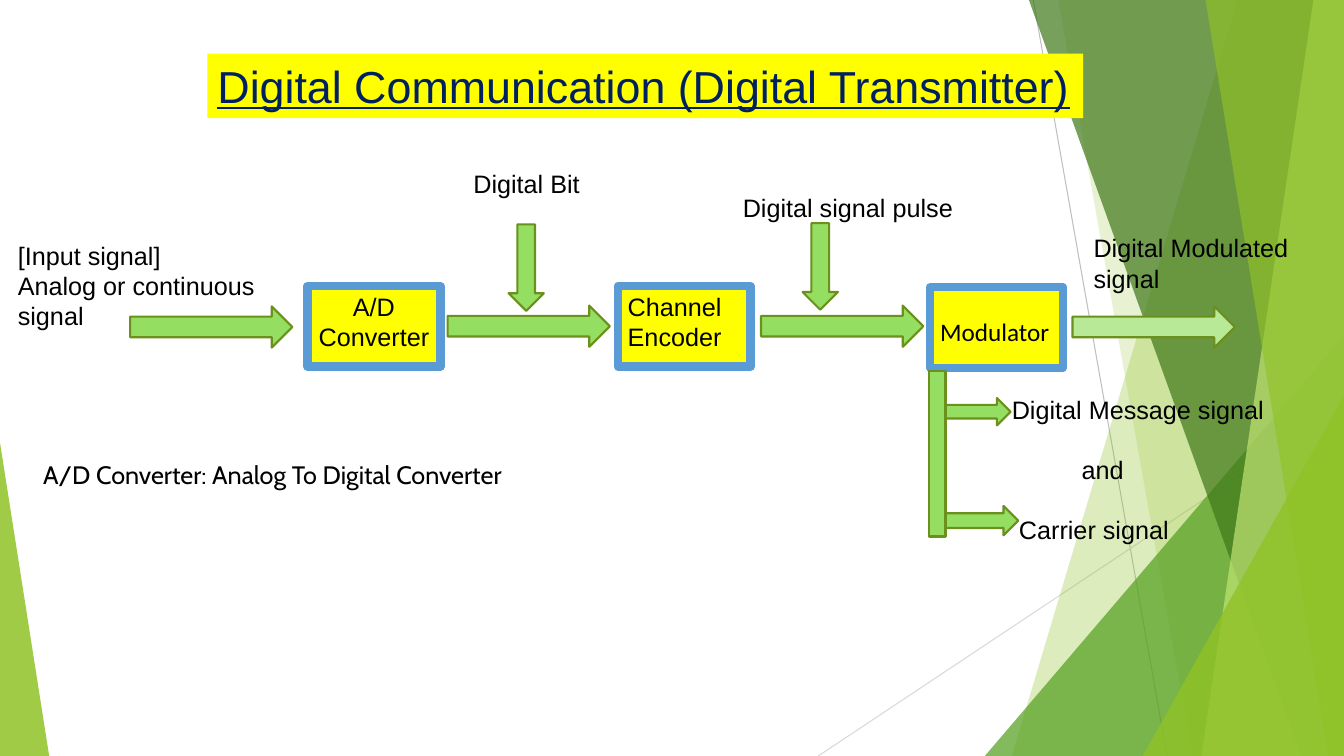
from dataclasses import dataclass

from lxml import etree
from pptx import Presentation
from pptx import util as u
from pptx.dml.color import RGBColor
from pptx.enum import shapes, text
from pptx.oxml.ns import qn

WIDTH, HEIGHT = 33.87, 19.05
YELLOW, GREEN, OLIVE, LIME = "FFFF00", "94DE61", "6B901C", "90C226"
ARROW = shapes.MSO_SHAPE.RIGHT_ARROW
RECTANGLE = shapes.MSO_SHAPE.RECTANGLE
LEFT, CENTER = text.PP_ALIGN.LEFT, text.PP_ALIGN.CENTER


@dataclass
class Band:
    """Backdrop area reaching from a slanted left edge to the slide's right side."""
    top_x: float
    bottom_x: float
    color: str
    opacity: int


@dataclass
class Wedge:
    """Right-angled triangle standing on the slide's bottom edge."""
    left: float
    width: float
    height: float
    apex: int
    color: str
    opacity: int


@dataclass
class Block:
    left: float
    top: float
    lines: list[str]
    font: str = "Arial"
    align: text.PP_ALIGN = LEFT
    inset_top: float = 0.13


@dataclass
class Part:
    """Green arrow or bar."""
    left: float
    top: float
    width: float = 4.09
    height: float = 1.04
    rotation: int = 0
    color: str = GREEN
    kind: shapes.MSO_SHAPE = ARROW


@dataclass
class Label:
    left: float
    top: float
    width: float
    height: float
    lines: list[str]
    font: str = "Arial"
    wrap: bool = False
    gap: float = 0
    indents: tuple[float, ...] = ()


BACKDROP = [
    Band(31.19, 25.5, LIME, 30),
    Band(26.67, 30.05, LIME, 20),
    Wedge(24.82, 9.05, 10.59, 1, "54A021", 72),
    Band(25.93, 32.79, "3F7819", 70),
    Band(33.1, 30.28, "C0E474", 70),
    Band(30.38, 33.48, LIME, 65),
    Wedge(28.8, 5.07, 9.07, 1, LIME, 80),
    Wedge(0, 1.24, 7.9, 0, LIME, 85),
]
BLOCKS = [
    Block(7.75, 7.21, ["A/D", "Converter"], align=CENTER),
    Block(15.57, 7.21, ["Channel Encoder"]),
    Block(23.44, 7.24, ["Modulator"], font="Calibri", inset_top=0.72),
]
PARTS = [
    Part(3.28, 7.72),
    Part(11.28, 7.7),
    Part(19.18, 7.7),
    Part(27.03, 7.72, color="B7E996"),
    Part(12.17, 6.3, 2.18, 0.89, rotation=90),
    Part(19.58, 6.27, 2.18, 0.89, rotation=90),
    Part(23.83, 12.75, 1.83, 0.74),
    Part(23.72, 10.03, 1.75, 0.69),
    Part(23.42, 9.35, 0.41, 4.17, kind=RECTANGLE),
]
LABELS = [
    Label(0.2, 5.92, 8, 2.57, ["[Input signal]", "Analog or continuous signal"], wrap=True),
    Label(11.68, 4.11, 3.23, 1.02, ["Digital Bit"]),
    Label(18.47, 4.72, 6.07, 1.02, ["Digital signal pulse"]),
    Label(27.31, 5.74, 5.46, 1.8, ["Digital Modulated", "signal"]),
    Label(25.25, 9.8, 7.11, 4.11, ["Digital Message signal", "and", "Carrier signal"],
          gap=21.6, indents=(0, 1.76, 0.18)),
    Label(0.84, 11.46, 12.88, 1.02, ["A/D Converter: Analog To Digital Converter"], font="Cabin"),
]


def rgb(color: str) -> RGBColor:
    return RGBColor.from_string(color)


def paint(shape, fill: str, line: str | None = None, weight: float = 0, opacity: int = 100) -> None:
    shape.shadow.inherit = False
    shape.fill.solid()
    shape.fill.fore_color.rgb = rgb(fill)
    if opacity < 100:
        tint = shape.fill._xPr.find(qn("a:solidFill"))[0]
        etree.SubElement(tint, qn("a:alpha")).set("val", str(opacity * 1000))
    if line:
        shape.line.color.rgb = rgb(line)
        shape.line.width = u.Pt(weight)
    else:
        shape.line.fill.background()


def write(shape, lines: list[str], font: str = "Arial", size: int = 18, color: str = "000000",
          align: text.PP_ALIGN = LEFT, wrap: bool = True, gap: float = 0,
          indents: tuple[float, ...] = ()) -> None:
    frame = shape.text_frame
    frame.word_wrap = wrap
    frame.vertical_anchor = text.MSO_ANCHOR.TOP
    frame.text = "\n".join(lines)
    for index, paragraph in enumerate(frame.paragraphs):
        paragraph.alignment = align
        if indents:
            paragraph._p.get_or_add_pPr().set("marL", str(u.Cm(indents[index])))
        if index and gap:
            paragraph.space_before = u.Pt(gap)
        paragraph.font.name = font
        paragraph.font.size = u.Pt(size)
        paragraph.font.color.rgb = rgb(color)


def add_box(slide, kind: shapes.MSO_SHAPE, left: float, top: float, width: float, height: float):
    return slide.shapes.add_shape(kind, u.Cm(left), u.Cm(top), u.Cm(width), u.Cm(height))


def add_hairline(slide, start: tuple[float, float], end: tuple[float, float], color: str) -> None:
    line = slide.shapes.add_connector(shapes.MSO_CONNECTOR.STRAIGHT, *map(u.Cm, start + end))
    line.line.color.rgb = rgb(color)
    line.line.width = u.Pt(0.75)
    etree.SubElement(line._element.spPr, qn("a:effectLst"))


def add_backdrop(slide, area: Band | Wedge) -> None:
    if isinstance(area, Band):
        builder = slide.shapes.build_freeform(u.Cm(area.top_x), 0)
        corners = [(WIDTH, 0), (WIDTH, HEIGHT), (area.bottom_x, HEIGHT)]
        builder.add_line_segments([(u.Cm(x), u.Cm(y)) for x, y in corners])
        shape = builder.convert_to_shape()
    else:
        shape = add_box(slide, shapes.MSO_SHAPE.ISOSCELES_TRIANGLE, area.left,
                        HEIGHT - area.height, area.width, area.height)
        shape.adjustments[0] = area.apex
    paint(shape, area.color, opacity=area.opacity)


def main() -> None:
    presentation = Presentation()
    presentation.slide_width, presentation.slide_height = u.Cm(WIDTH), u.Cm(HEIGHT)
    slide = presentation.slides.add_slide(presentation.slide_layouts[6])

    # Backdrop
    add_hairline(slide, (26.04, 0), (29.41, HEIGHT), "BFBFBF")
    add_hairline(slide, (WIDTH, 10.24), (20.62, HEIGHT), "D9D9D9")
    for area in BACKDROP:
        add_backdrop(slide, area)

    # Transmitter stages
    for block in BLOCKS:
        shape = add_box(slide, RECTANGLE, block.left, block.top, 3.35, 2.03)
        paint(shape, YELLOW, "5B9BD5", 6)
        write(shape, block.lines, block.font, align=block.align)
        shape.text_frame.margin_top = u.Cm(block.inset_top)

    # Signal arrows and the modulator's bar
    for part in PARTS:
        shape = add_box(slide, part.kind, part.left, part.top, part.width, part.height)
        shape.rotation = part.rotation
        paint(shape, part.color, OLIVE, 1.5)

    # Labels
    for label in LABELS:
        shape = slide.shapes.add_textbox(u.Cm(label.left), u.Cm(label.top),
                                         u.Cm(label.width), u.Cm(label.height))
        write(shape, label.lines, label.font, wrap=label.wrap, gap=label.gap,
              indents=label.indents)

    # Title
    title = add_box(slide, RECTANGLE, 5.23, 1.35, 22.07, 1.63)
    paint(title, YELLOW)
    write(title, ["Digital Communication (Digital Transmitter)"], size=32, color="002060")
    title.text_frame.paragraphs[0].font.underline = True

    presentation.save("out.pptx")


if __name__ == "__main__":
    main()
